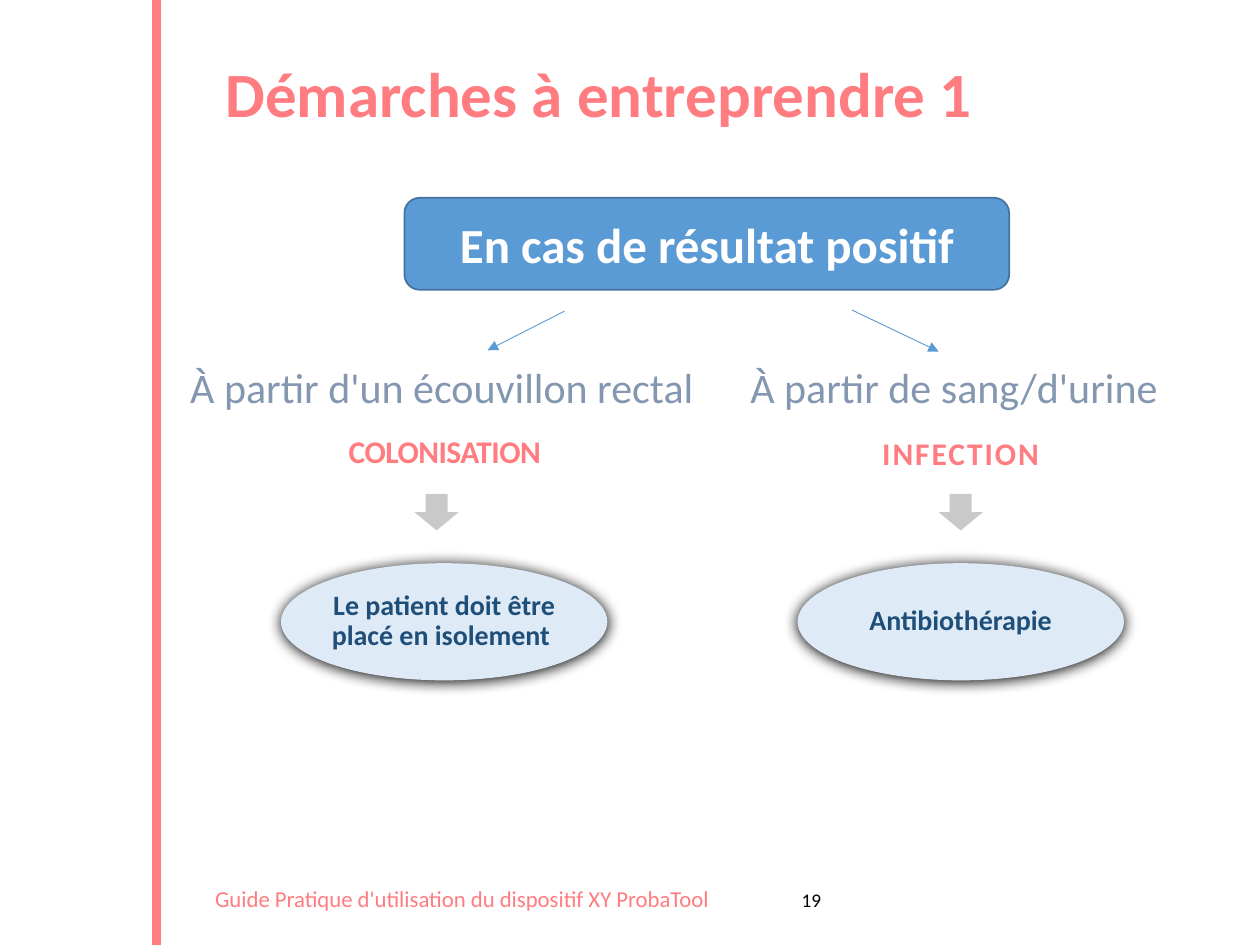
from dataclasses import dataclass

from lxml.etree import SubElement
from pptx import Presentation
from pptx.dml.color import RGBColor
from pptx.enum.shapes import MSO_CONNECTOR, MSO_SHAPE
from pptx.enum.text import MSO_ANCHOR, MSO_AUTO_SIZE, PP_ALIGN
from pptx.oxml.ns import qn
from pptx.util import Inches, Pt

COLORS = {
    "coral": "FF7C80", "blue": "5B9BD5", "blue_edge": "43739E",
    "slate": "8497B0", "pale": "DEEBF7", "navy": "1F4E79",
    "grey": "C9C9C9", "white": "FFFFFF", "black": "000000",
}


@dataclass
class Style:
    size: float
    color: str
    bold: bool = False
    align: PP_ALIGN = PP_ALIGN.CENTER
    anchor: MSO_ANCHOR = MSO_ANCHOR.MIDDLE
    line_spacing: float = 0.9
    margins: tuple = (0.03, 0.03)
    tracking: int = 0


@dataclass
class Branch:
    origin: str
    origin_box: tuple
    status: str
    status_box: tuple
    tracking: int
    action: str
    action_left: float
    arrow_left: float
    link: tuple


BRANCHES = [
    Branch("À partir d'un écouvillon rectal ", (1.48, 2.89, 4.13, 0.41),
           "COLONISATION", (2.72, 3.44, 1.62, 0.32), -30,
           "Le patient doit être placé en isolement ", 2.23, 3.29,
           (4.48, 2.47, 3.87, 2.78)),
    Branch("À partir de sang/d'urine ", (5.91, 2.89, 3.4, 0.41),
           "INFECTION", (6.86, 3.46, 1.53, 0.3), 110,
           "Antibiothérapie", 6.33, 7.45,
           (6.76, 2.46, 7.45, 2.79)),
]


def rgb(name: str) -> RGBColor:
    return RGBColor.from_string(COLORS[name])


def inches(values: tuple) -> list:
    return [Inches(value) for value in values]


def write(box, text: str, style: Style) -> None:
    frame = box.text_frame
    side, edge = inches(style.margins)
    frame_format = {
        "word_wrap": True, "auto_size": MSO_AUTO_SIZE.NONE,
        "vertical_anchor": style.anchor,
        "margin_left": side, "margin_right": side,
        "margin_top": edge, "margin_bottom": edge,
    }
    for name, value in frame_format.items():
        setattr(frame, name, value)
    para = frame.paragraphs[0]
    para.alignment = style.align
    para.line_spacing = style.line_spacing
    span = para.add_run()
    span.text = text
    font_format = {"name": "Calibri", "size": Pt(style.size), "bold": style.bold}
    for name, value in font_format.items():
        setattr(span.font, name, value)
    span.font.color.rgb = rgb(style.color)
    if style.tracking:
        span.font._element.set("spc", str(style.tracking))


def add_label(page, place: tuple, text: str, style: Style) -> None:
    write(page.shapes.add_textbox(*inches(place)), text, style)


def add_block(page, kind: MSO_SHAPE, place: tuple, fill: str):
    block = page.shapes.add_shape(kind, *inches(place))
    block.shadow.inherit = False
    block.fill.solid()
    block.fill.fore_color.rgb = rgb(fill)
    block.line.fill.background()
    return block


def add_soft_shadow(block) -> None:
    effects = block._element.spPr.find(qn("a:effectLst"))
    shadow = SubElement(effects, qn("a:outerShdw"), blurRad=str(Pt(8.5)),
                        dist=str(Pt(1)), dir="5400000", rotWithShape="0")
    SubElement(shadow, qn("a:srgbClr"), val=COLORS["black"])


def add_line(page, ends: tuple, color: str, width: float, arrow: bool = False) -> None:
    line = page.shapes.add_connector(MSO_CONNECTOR.STRAIGHT, *inches(ends))
    line.line.color.rgb = rgb(color)
    line.line.width = Pt(width)
    if arrow:
        SubElement(line.line._get_or_add_ln(), qn("a:tailEnd"), type="triangle")
    SubElement(line._element.spPr, qn("a:effectLst"))


def add_branch(page, branch: Branch) -> None:
    add_line(page, branch.link, "blue", 0.5, arrow=True)
    add_label(page, branch.origin_box, branch.origin, Style(24, "slate"))
    add_label(page, branch.status_box, branch.status,
              Style(18, "coral", bold=True, tracking=branch.tracking))
    add_block(page, MSO_SHAPE.DOWN_ARROW, (branch.arrow_left, 3.92, 0.35, 0.29), "grey")
    action = add_block(page, MSO_SHAPE.OVAL, (branch.action_left, 4.47, 2.59, 0.93), "pale")
    add_soft_shadow(action)
    # An oval already insets its text to the inscribed rectangle
    write(action, branch.action, Style(16, "navy", bold=True, margins=(0, 0)))


def main() -> None:
    deck = Presentation()
    deck.slide_width, deck.slide_height = inches((10, 7.5))
    page = deck.slides.add_slide(deck.slide_layouts[5])

    # Side rule and title
    add_line(page, (1.24, 7.5, 1.24, 0), "coral", 5)
    title = page.shapes.title
    title.left, title.top, title.width, title.height = inches((1.69, 0.45, 7.63, 0.93))
    write(title, "Démarches à entreprendre 1",
          Style(36, "coral", True, PP_ALIGN.LEFT, MSO_ANCHOR.TOP, margins=(0.1, 0.05)))

    # Starting point
    banner = add_block(page, MSO_SHAPE.ROUNDED_RECTANGLE, (3.21, 1.57, 4.8, 0.73), "blue")
    banner.line.color.rgb = rgb("blue_edge")
    banner.line.width = Pt(1)
    write(banner, "En cas de résultat positif", Style(28, "white", True, line_spacing=1.0))

    # The two outcomes
    for branch in BRANCHES:
        add_branch(page, branch)

    # Footer and page number
    add_label(page, (1.61, 6.97, 5.06, 0.54),
              "Guide Pratique d'utilisation du dispositif XY ProbaTool",
              Style(13, "coral", False, PP_ALIGN.LEFT, MSO_ANCHOR.TOP, 1.0, (0.1, 0.05)))
    add_label(page, (6.22, 7, 0.44, 0.29), "19",
              Style(11, "black", False, PP_ALIGN.CENTER, MSO_ANCHOR.TOP, 1.0, (0.1, 0.05)))

    deck.save("out.pptx")


if __name__ == "__main__":
    main()
